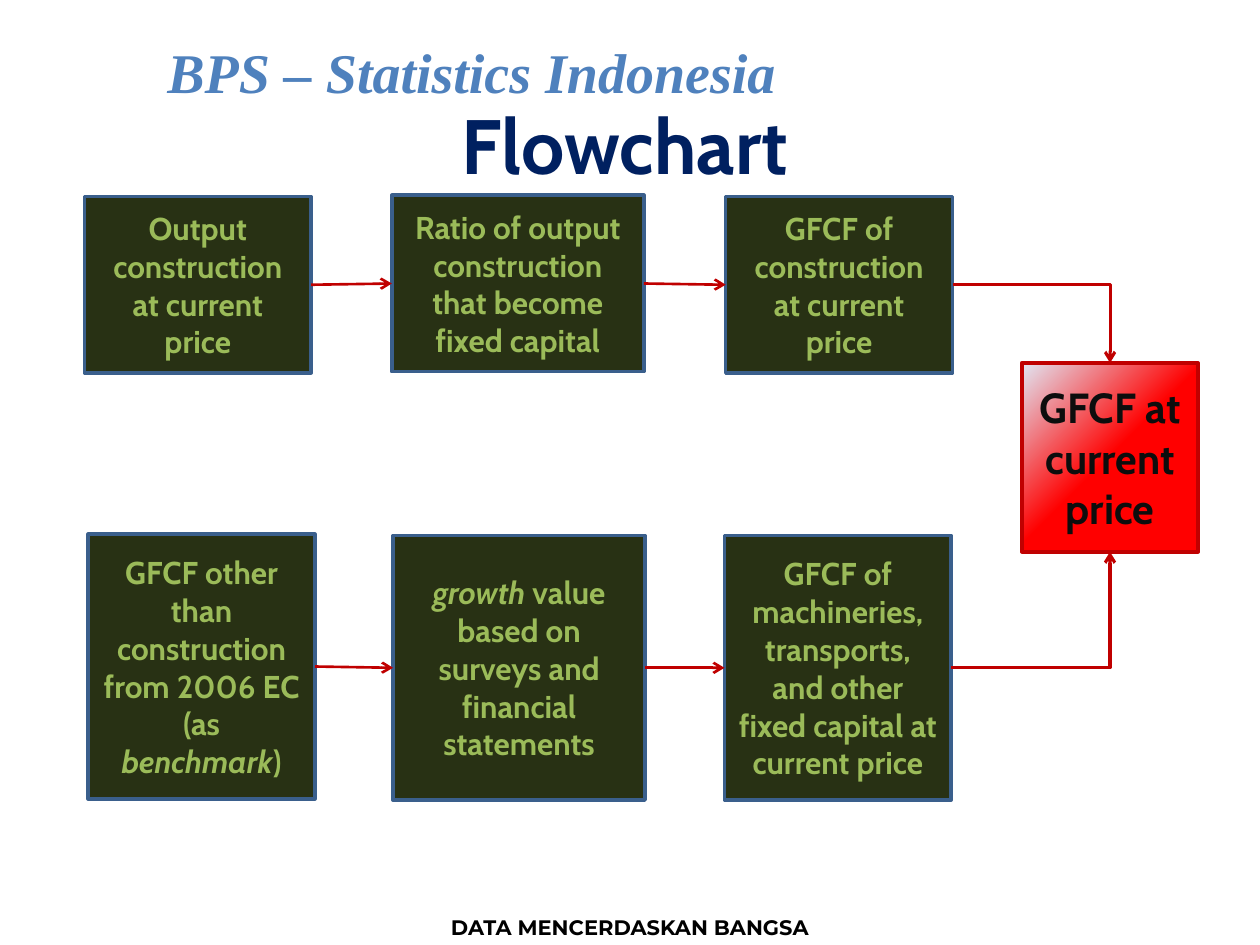
from dataclasses import dataclass

from lxml import etree
from pptx import Presentation
from pptx.dml.color import RGBColor
from pptx.enum.shapes import MSO_CONNECTOR, MSO_SHAPE
from pptx.enum.text import MSO_ANCHOR, PP_ALIGN
from pptx.oxml import parse_xml
from pptx.oxml.ns import nsdecls, qn
from pptx.util import Inches, Pt

RECT = MSO_SHAPE.RECTANGLE
STRAIGHT, ELBOW = MSO_CONNECTOR.STRAIGHT, MSO_CONNECTOR.ELBOW
CENTER = PP_ALIGN.CENTER
TOP_ANCHOR, MIDDLE = MSO_ANCHOR.TOP, MSO_ANCHOR.MIDDLE
TOP, LEFT, BOTTOM, RIGHT = range(4)


@dataclass(frozen=True)
class Theme:
    font: str = "Cabin"
    header_font: str = "Times New Roman"
    footer_font: str = "Montserrat"
    header: str = "4F81BD"
    title: str = "002060"
    footer: str = "000000"
    step_fill: str = "283114"
    step_line: str = "3A5F8C"
    step_text: str = "9BBB59"
    result_fill: str = "FF0000"
    result_glow: str = "E1E8F5"
    result_text: str = "0D0D0D"
    accent: str = "C00000"
    header_size: int = 32
    title_size: int = 44
    footer_size: int = 12
    step_size: int = 18
    result_size: int = 24
    box_line: float = 2
    arrow_line: float = 1.5
    elbow_line: float = 1.75


@dataclass(frozen=True)
class Box:
    """A place on the slide in inches, with its text; *stars* mark italics."""
    left: float
    top: float
    width: float
    height: float
    text: str

    def place(self):
        return [Inches(v) for v in (self.left, self.top, self.width, self.height)]


THEME = Theme()

HEADER = Box(0.83, 0.25, 5.83, 0.64, "BPS – Statistics Indonesia")
TITLE = Box(0.46, 0.84, 9, 0.6, "Flowchart")
FOOTER = Box(0, 7.21, 10, 0.3, "DATA MENCERDASKAN BANGSA")

CONSTRUCTION = [
    Box(0.67, 1.56, 1.8, 1.4, "Output construction at current price"),
    Box(3.11, 1.55, 2, 1.4, "Ratio of output construction that become fixed capital"),
    Box(5.76, 1.56, 1.8, 1.4, "GFCF of construction at current price"),
]
OTHER_CAPITAL = [
    Box(0.7, 4.24, 1.8, 2.1, "GFCF other than construction from 2006 EC (as *benchmark*)"),
    Box(3.12, 4.25, 2, 2.1, "*growth* value based on surveys and financial statements"),
    Box(5.75, 4.25, 1.8, 2.1, "GFCF of machineries, transports, and other fixed capital "
                              "at current price"),
]
RESULT = Box(8.11, 2.88, 1.4, 1.5, "GFCF at current price")


def rgb(color: str) -> RGBColor:
    return RGBColor.from_string(color)


def write(sp, text: str, *, font: str = THEME.font, size: float, color: str,
          italic: bool = False, anchor=MIDDLE) -> None:
    """Fill a shape with centred bold text; *stars* switch italics on and off."""
    tf = sp.text_frame
    tf.word_wrap = True
    tf.vertical_anchor = anchor
    p = tf.paragraphs[0]
    p.alignment = CENTER
    for i, part in enumerate(text.split("*")):
        if not part:
            continue
        r = p.add_run()
        r.text = part
        r.font.name = font
        r.font.size = Pt(size)
        r.font.bold = True
        r.font.italic = italic or i % 2 == 1
        r.font.color.rgb = rgb(color)


def add_label(s, box: Box, **style) -> None:
    write(s.shapes.add_textbox(*box.place()), box.text, **style)


def add_box(s, box: Box, line: str, **style):
    sp = s.shapes.add_shape(RECT, *box.place())
    sp.shadow.inherit = False
    sp.line.color.rgb = rgb(line)
    sp.line.width = Pt(THEME.box_line)
    write(sp, box.text, **style)
    return sp


def add_step(s, box: Box):
    sp = add_box(s, box, THEME.step_line, size=THEME.step_size, color=THEME.step_text)
    sp.fill.solid()
    sp.fill.fore_color.rgb = rgb(THEME.step_fill)
    return sp


def add_result(s, box: Box):
    """Draw the final box, its gradient spreading from the lower right corner."""
    sp = add_box(s, box, THEME.accent, size=THEME.result_size, color=THEME.result_text)
    gradient = parse_xml(
        f'<a:gradFill {nsdecls("a")} rotWithShape="1"><a:gsLst>'
        f'<a:gs pos="50000"><a:srgbClr val="{THEME.result_fill}"/></a:gs>'
        f'<a:gs pos="100000"><a:srgbClr val="{THEME.result_glow}"/></a:gs></a:gsLst>'
        '<a:path path="circle"><a:fillToRect l="100000" t="100000"/></a:path></a:gradFill>')
    sp._element.spPr.find(qn("a:prstGeom")).addnext(gradient)
    return sp


def add_arrow(s, start, end, end_side: int = LEFT) -> None:
    """Join the right side of start to a side of end, with one bend if needed."""
    bent = end_side != LEFT
    cxn = s.shapes.add_connector(ELBOW if bent else STRAIGHT, 0, 0, 0, 0)
    cxn.begin_connect(start, RIGHT)
    cxn.end_connect(end, end_side)
    cxn.line.color.rgb = rgb(THEME.accent)
    cxn.line.width = Pt(THEME.elbow_line if bent else THEME.arrow_line)
    sp_pr = cxn._element.spPr
    if bent:
        sp_pr.find(qn("a:prstGeom")).set("prst", "bentConnector2")
    etree.SubElement(sp_pr.find(qn("a:ln")), qn("a:tailEnd"), type="arrow")
    etree.SubElement(sp_pr, qn("a:effectLst"))


def main() -> None:
    prs = Presentation()
    prs.slide_width, prs.slide_height = Inches(10), Inches(7.5)
    s = prs.slides.add_slide(prs.slide_layouts[6])

    add_label(s, FOOTER, font=THEME.footer_font, size=THEME.footer_size,
              color=THEME.footer, anchor=TOP_ANCHOR)
    add_label(s, HEADER, font=THEME.header_font, size=THEME.header_size,
              color=THEME.header, italic=True, anchor=TOP_ANCHOR)
    add_label(s, TITLE, size=THEME.title_size, color=THEME.title)

    result = add_result(s, RESULT)
    for row, side in ((CONSTRUCTION, TOP), (OTHER_CAPITAL, BOTTOM)):
        steps = [add_step(s, box) for box in row]
        for start, end in zip(steps, steps[1:]):
            add_arrow(s, start, end)
        add_arrow(s, steps[-1], result, side)

    prs.save("out.pptx")


if __name__ == "__main__":
    main()
